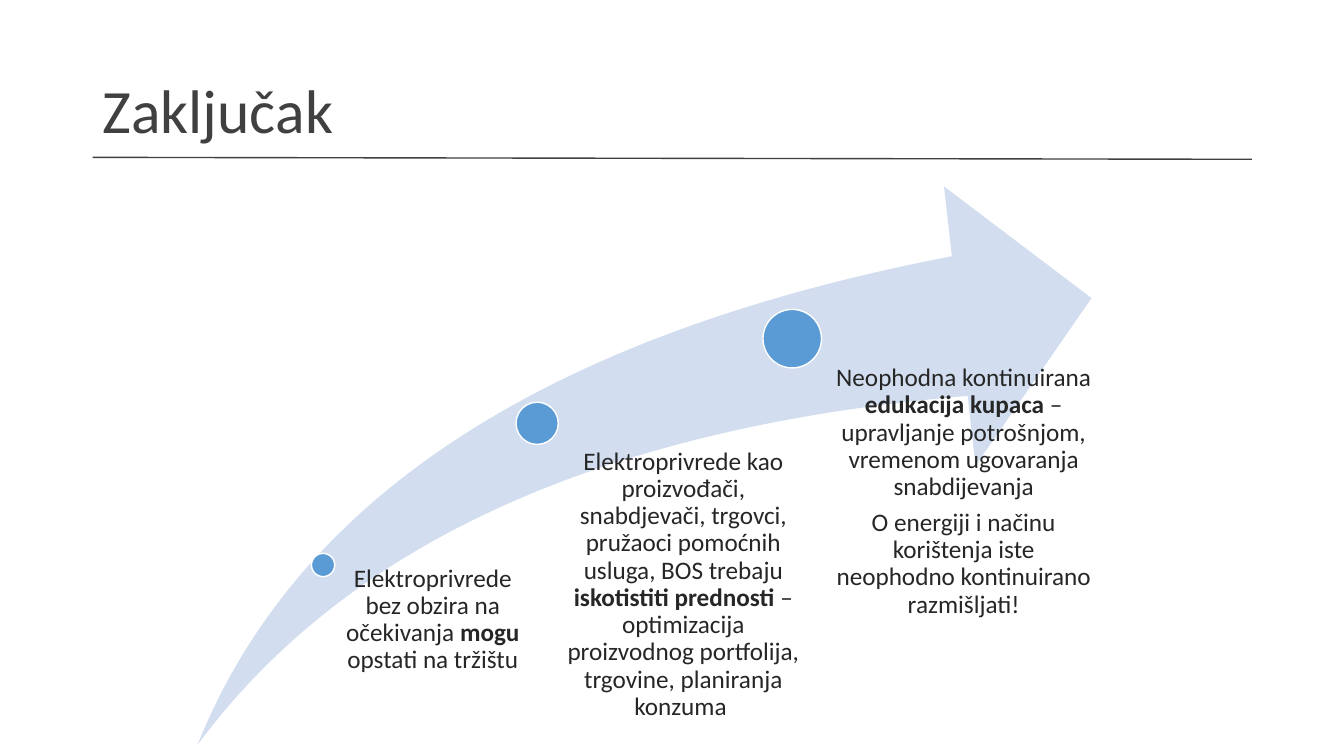
"""Build the closing slide: a rising arrow with three conclusions."""
from pptx import Presentation
from pptx.dml.color import RGBColor
from pptx.enum import shapes, text
from pptx.oxml import xmlchemy as xml
from pptx.util import Pt

WHITE = RGBColor(0xFF, 0xFF, 0xFF)
GREY = RGBColor(0x40, 0x40, 0x40)
INK = RGBColor(0x26, 0x26, 0x26)
PALE = RGBColor(0xD2, 0xDE, 0xEF)
BLUE = RGBColor(0x5B, 0x9B, 0xD5)
FONT = "Calibri"

STEPS = [
    ((222.5, 395.3, 16.6), (230.4, 403.9, 149, 115.2), 8.6,
     [[("Elektroprivrede bez obzira na očekivanja ", False),
       ("mogu ", True),
       ("opstati na tržištu", False)]]),
    ((368.6, 287.3, 30.2), (384.5, 320.4, 191.5, 180), 15.8,
     [[("Elektroprivrede kao proizvođači, snabdjevači, trgovci, "
        "pružaoci pomoćnih usluga, BOS trebaju ", False),
       ("iskotistiti prednosti", True),
       (" – optimizacija proizvodnog portfolija, trgovine, "
        "planiranja konzuma ", False)]]),
    ((545, 221, 41.8), (574.6, 260.6, 205.2, 270), 22.3,
     [[("Neophodna kontinuirana ", False),
       ("edukacija kupaca ", True),
       ("– upravljanje potrošnjom, vremenom ugovaranja snabdijevanja",
        False)],
      [("O energiji i načinu korištenja iste neophodno kontinuirano "
        "razmišljati!", False)]]),
]


def style(run, size, color, bold=False):
    """Format one run of text."""
    font = run.font
    font.name, font.size, font.bold = FONT, Pt(size), bold
    font.color.rgb = color


def add_title(slide, label):
    """Place and format the title."""
    title = slide.shapes.title
    title.left, title.top = Pt(66.24), Pt(28.8)
    title.width, title.height = Pt(828), Pt(104.4)
    frame = title.text_frame
    frame.text = label
    frame.vertical_anchor = text.MSO_ANCHOR.MIDDLE
    para = frame.paragraphs[0]
    para.alignment = text.PP_ALIGN.LEFT
    para.line_spacing = 0.9
    style(para.runs[0], 44, GREY)


def add_rule(slide):
    """Draw the thin line under the title."""
    rule = slide.shapes.add_connector(
        shapes.MSO_CONNECTOR.STRAIGHT,
        Pt(66.24), Pt(112.4), Pt(894.24), Pt(113.8))
    rule.line.color.rgb = GREY
    rule.line.width = Pt(1)
    props = rule._element.spPr
    props.append(xml.OxmlElement("a:effectLst"))


def add_form(slide, kind, box, fill, line=None):
    """Draw a filled preset shape, outlined if a line colour is given."""
    form = slide.shapes.add_shape(kind, *map(Pt, box))
    form.shadow.inherit = False
    form.fill.solid()
    form.fill.fore_color.rgb = fill
    if line is None:
        form.line.fill.background()
    else:
        form.line.color.rgb = line
        form.line.width = Pt(1)
    return form


def add_note(slide, box, inset, paras):
    """Write a centred text box with mixed bold and plain runs."""
    frame = slide.shapes.add_textbox(*map(Pt, box)).text_frame
    frame.word_wrap = True
    frame.margin_left = Pt(inset)
    frame.margin_top = frame.margin_right = frame.margin_bottom = 0
    for index, parts in enumerate(paras):
        para = frame.add_paragraph() if index else frame.paragraphs[0]
        para.alignment = text.PP_ALIGN.CENTER
        para.line_spacing = 0.9
        para.space_after = Pt(6.3)
        for words, bold in parts:
            run = para.add_run()
            run.text = words
            style(run, 18, INK, bold)


def main():
    """Build and save the slide."""
    deck = Presentation()
    deck.slide_width, deck.slide_height = Pt(960), Pt(540)
    slide = deck.slides.add_slide(deck.slide_layouts[5])
    add_title(slide, "Zaključak")
    add_rule(slide)
    arrow = add_form(slide, shapes.MSO_SHAPE.SWOOSH_ARROW,
                     (141.1, 133.2, 638.6, 398.9), PALE)
    arrow.adjustments[0] = arrow.adjustments[1] = 0.25
    for (left, top, size), box, inset, paras in STEPS:
        add_form(slide, shapes.MSO_SHAPE.OVAL, (left, top, size, size),
                 BLUE, WHITE)
        add_note(slide, box, inset, paras)
    deck.save("out.pptx")


if __name__ == "__main__":
    main()
